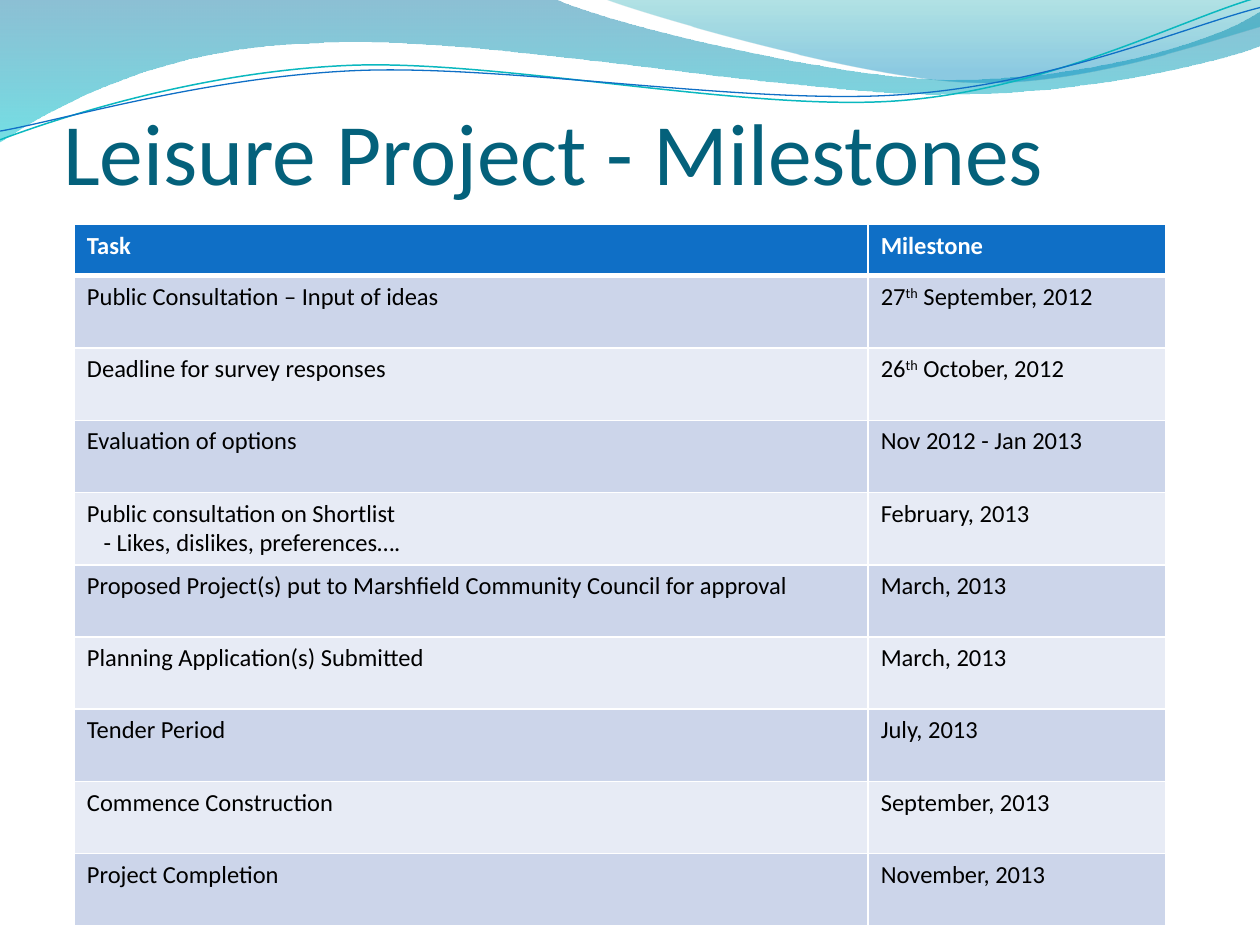
from dataclasses import dataclass

import lxml.etree
import pptx
import pptx.dml.color
import pptx.enum.text
import pptx.oxml.ns
import pptx.util

Pt = pptx.util.Pt
qn = pptx.oxml.ns.qn
Point = tuple[float, float]


@dataclass(frozen=True)
class Theme:
    font: str = "Calibri"
    title_size: float = 50
    cell_size: float = 14
    title: str = "04617B"
    header: str = "0F6FC6"
    bands: tuple[str, str] = ("CCD5EA", "E7EBF5")
    text: str = "000000"
    white: str = "FFFFFF"
    teal: str = "0AB8BF"


@dataclass(frozen=True)
class Stop:
    position: float
    color: str
    opacity: int


@dataclass(frozen=True)
class Wave:
    """Outline in points: a segment of one point is a line, of three a Bezier curve."""
    start: Point
    segments: tuple[tuple[Point, ...], ...]
    stops: tuple[Stop, ...] = ()
    line: str = ""
    width: float = 0


@dataclass(frozen=True)
class Task:
    name: str
    milestone: str  # text between carets is superscript


THEME = Theme()
INDENT = 9.5
COLUMNS = (453.6, 169.9)
HEADER_HEIGHT, ROW_HEIGHT = 29.2, 41.28

WAVES = (
    Wave((0, 0), (
        ((316.8, -0.7),),
        ((342.7, 12.2), (478.1, 45.4), (545.8, 45.4)),
        ((614.2, 45.4), (689.8, 26.6), (720, 6.5)),
        ((720.7, 25.9),),
        ((707.8, 31.7), (626.4, 54.7), (537.1, 54)),
        ((447.8, 54), (275, 20.2), (185, 24.5)),
        ((92.9, 25.9), (33.1, 59.8), (-0.7, 81.4)),
        ((0, 0),),
    ), stops=(Stop(0, "0074A1", 45), Stop(1, "00C6CF", 55))),
    Wave((344.9, -0.7), (
        ((366.5, 7.9), (491, 44.6), (553.7, 46.8)),
        ((616.3, 49.7), (691.9, 23), (720, 15.1)),
        ((720, 0),),
        ((344.9, -0.7),),
    ), stops=(Stop(0, "00A1A9", 30), Stop(0.8, "008BBF", 45))),
    Wave((0, 79.9), (
        ((34.6, 67), (113.8, 41), (199.4, 37.4)),
        ((284.4, 33.8), (427, 64.1), (513.4, 57.6)),
        ((599.8, 51.1), (675.4, 10.8), (718.6, -1.4)),
    ), line=THEME.teal, width=0.85),
    Wave((0, 74.9), (
        ((33.8, 69.1), (118.1, 43.9), (203.8, 40.3)),
        ((290.2, 36.7), (429.8, 60.5), (516.2, 54)),
        ((601.9, 48.2), (677.5, 15.1), (720, 4.3)),
    ), line=THEME.header, width=0.75),
)

TASKS = (
    Task("Public Consultation – Input of ideas", "27^th^ September, 2012"),
    Task("Deadline for survey responses", "26^th^ October, 2012"),
    Task("Evaluation of options", "Nov 2012 - Jan 2013"),
    Task("Public consultation on Shortlist\n- Likes, dislikes, preferences….", "February, 2013"),
    Task("Proposed Project(s) put to Marshfield Community Council for approval", "March, 2013"),
    Task("Planning Application(s) Submitted", "March, 2013"),
    Task("Tender Period", "July, 2013"),
    Task("Commence Construction", "September, 2013"),
    Task("Project Completion", "November, 2013"),
)


def rgb(color: str) -> pptx.dml.color.RGBColor:
    return pptx.dml.color.RGBColor.from_string(color)


def write_text(tf, text: str, *, size: float, color: str, bold: bool = False) -> None:
    """Fill a text frame; later lines are indented, text between carets is raised."""
    for i, line in enumerate(text.split("\n")):
        p = tf.add_paragraph() if i else tf.paragraphs[0]
        p.alignment = pptx.enum.text.PP_ALIGN.LEFT
        if i:
            p._p.get_or_add_pPr().set("marL", str(Pt(INDENT)))
        for j, part in enumerate(line.split("^")):
            r = p.add_run()
            r.text = part
            r.font.name, r.font.size, r.font.bold = THEME.font, Pt(size), bold
            r.font.color.rgb = rgb(color)
            if j % 2:
                r._r.get_or_add_rPr().set("baseline", "30000")


def bend(sp, segments: tuple[tuple[Point, ...], ...]) -> None:
    """Join the straight pieces of each three-point segment into one Bezier curve."""
    pieces = iter(list(sp.element.iter(qn("a:lnTo"))))
    for segment in segments:
        group = [next(pieces) for _ in segment]
        if len(group) == 1:
            continue
        curve = lxml.etree.Element(qn("a:cubicBezTo"))
        group[0].addprevious(curve)
        for piece in group:
            curve.append(piece[0])
            piece.getparent().remove(piece)


def draw_wave(s, wave: Wave) -> None:
    # outline units are tenths of a point, as the builder keeps whole numbers
    points = [(round(x * 10), round(y * 10))
              for segment in ((wave.start,), *wave.segments) for x, y in segment]
    builder = s.shapes.build_freeform(*points[0], scale=Pt(1) / 10)
    builder.add_line_segments(points[1:], close=bool(wave.stops))
    sp = builder.convert_to_shape()
    bend(sp, wave.segments)
    sp.shadow.inherit = False
    if wave.line:
        sp.fill.background()
        sp.line.color.rgb = rgb(wave.line)
        sp.line.width = Pt(wave.width)
        return
    sp.line.fill.background()
    sp.fill.gradient()
    sp.fill.gradient_angle = 270
    for target, stop in zip(sp.fill.gradient_stops, wave.stops):
        target.position = stop.position
        target.color.rgb = rgb(stop.color)
    for clr, stop in zip(sp.element.iter(qn("a:srgbClr")), wave.stops):
        lxml.etree.SubElement(clr, qn("a:alpha"), val=str(stop.opacity * 1000))


def set_borders(cell, top: float, bottom: float) -> None:
    tc_pr = cell._tc.get_or_add_tcPr()
    for side, width in (("L", 1), ("R", 1), ("T", top), ("B", bottom)):
        ln = lxml.etree.SubElement(tc_pr, qn(f"a:ln{side}"), w=str(Pt(width)))
        fill = lxml.etree.SubElement(ln, qn("a:solidFill"))
        lxml.etree.SubElement(fill, qn("a:srgbClr"), val=THEME.white)


def draw_table(s, tasks: tuple[Task, ...]) -> None:
    rows = (Task("Task", "Milestone"), *tasks)
    height = HEADER_HEIGHT + ROW_HEIGHT * len(tasks)
    table = s.shapes.add_table(len(rows), len(COLUMNS), Pt(42.5), Pt(128.4),
                               Pt(sum(COLUMNS)), Pt(height)).table
    for column, width in zip(table.columns, COLUMNS):
        column.width = Pt(width)
    for i, task in enumerate(rows):
        header = i == 0
        table.rows[i].height = Pt(HEADER_HEIGHT if header else ROW_HEIGHT)
        for j, text in enumerate((task.name, task.milestone)):
            cell = table.cell(i, j)
            set_borders(cell, top=3 if i == 1 else 1, bottom=3 if header else 1)
            cell.fill.solid()
            cell.fill.fore_color.rgb = rgb(THEME.header if header else THEME.bands[(i - 1) % 2])
            write_text(cell.text_frame, text, size=THEME.cell_size, bold=header,
                       color=THEME.white if header else THEME.text)


def draw_title(s, text: str) -> None:
    sp = s.shapes.title
    sp.left, sp.top, sp.width, sp.height = Pt(36), Pt(26), Pt(648), Pt(90)
    tf = sp.text_frame
    tf.word_wrap = True
    tf.auto_size = pptx.enum.text.MSO_AUTO_SIZE.NONE
    tf.vertical_anchor = pptx.enum.text.MSO_ANCHOR.BOTTOM
    tf.margin_left = tf.margin_right = tf.margin_bottom = 0
    tf.margin_top = Pt(3.6)
    write_text(tf, text, size=THEME.title_size, color=THEME.title)
    sp.element.getparent().append(sp.element)  # in front of the waves


def main() -> None:
    prs = pptx.Presentation()
    prs.slide_width, prs.slide_height = Pt(720), Pt(540)
    s = prs.slides.add_slide(prs.slide_layouts[5])
    for wave in WAVES:
        draw_wave(s, wave)
    draw_title(s, "Leisure Project - Milestones")
    draw_table(s, TASKS)
    prs.save("out.pptx")


if __name__ == "__main__":
    main()
